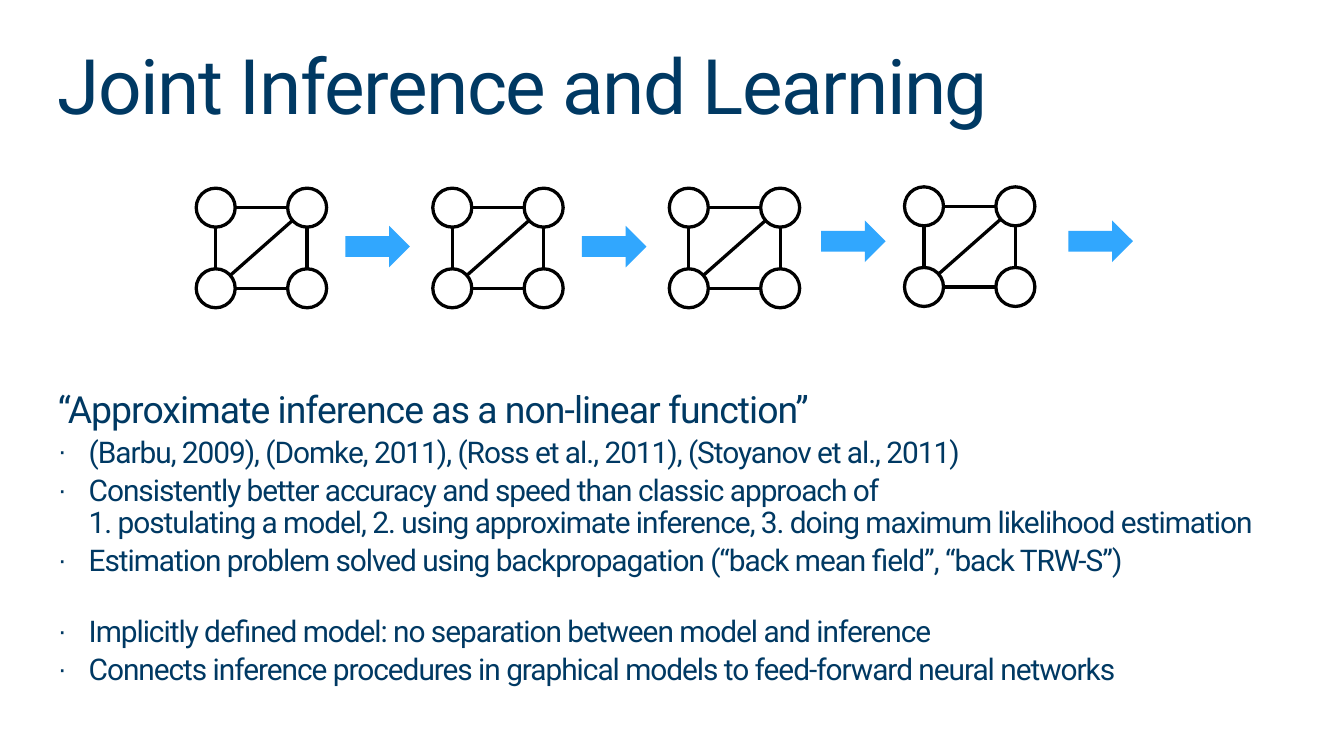
from copy import deepcopy
from math import hypot
from typing import NamedTuple

from lxml import etree
from pptx import Presentation
from pptx import util as u
from pptx.dml.color import RGBColor
from pptx.enum import shapes, text
from pptx.oxml.ns import qn

COLORS = {"text": "003963", "graph": "000000", "arrow": "31A7FE"}
FONT = "Roboto"
NODE_SIZE = 0.29
NODES = [(0, 0), (0.68, 0), (0.68, 0.6), (0, 0.6)]  # clockwise from top left
EDGES = [(0, 1), (0, 3), (1, 2), (3, 2), (3, 1)]


class Stage(NamedTuple):
    graph_left: float
    graph_top: float
    arrow_left: float
    arrow_top: float


class Line(NamedTuple):
    words: str
    size: float = 16
    space_before: float = 3.2
    bullet: bool = True


STAGES = [
    Stage(1.46, 1.4, 2.57, 1.68),
    Stage(3.22, 1.4, 4.33, 1.68),
    Stage(4.98, 1.4, 6.11, 1.64),
    Stage(6.73, 1.39, 7.95, 1.64),
]

TITLE = Line("Joint Inference and Learning", 41, 0, False)
POINTS = [
    Line("“Approximate inference as a non-linear function”", 20, 4.7, False),
    Line("(Barbu, 2009), (Domke, 2011), (Ross et al., 2011), (Stoyanov et al., 2011)"),
    Line("Consistently better accuracy and speed than classic approach of\v"
         "1. postulating a model, 2. using approximate inference, "
         "3. doing maximum likelihood estimation"),
    Line("Estimation problem solved using backpropagation "
         "(“back mean field”, “back TRW-S”)"),
    Line("Implicitly defined model: no separation between model and inference",
         space_before=20.6),
    Line("Connects inference procedures in graphical models "
         "to feed-forward neural networks"),
]


def color(name: str) -> RGBColor:
    return RGBColor.from_string(COLORS[name])


def write_lines(holder, box: tuple, lines: list[Line], tracking: float) -> None:
    """Place a placeholder and fill it with formatted paragraphs."""
    holder.left, holder.top, holder.width, holder.height = map(u.Inches, box)
    frame = holder.text_frame
    frame.margin_left = frame.margin_right = frame.margin_top = frame.margin_bottom = 0
    frame.word_wrap = True
    frame.auto_size = text.MSO_AUTO_SIZE.NONE
    frame.vertical_anchor = text.MSO_ANCHOR.TOP
    for index, line in enumerate(lines):
        paragraph = frame.add_paragraph() if index else frame.paragraphs[0]
        paragraph.text = line.words
        paragraph.alignment = text.PP_ALIGN.LEFT
        paragraph.line_spacing = 0.9
        paragraph.space_before = u.Pt(line.space_before)
        for run in paragraph.runs:
            run.font.name = FONT
            run.font.size = u.Pt(line.size)
            run.font.color.rgb = color("text")
            run._r.get_or_add_rPr().set("spc", str(round(tracking * 100)))
        # A line break keeps the size of the text around it
        for line_break in paragraph._p.findall(qn("a:br")):
            line_break.append(deepcopy(paragraph.runs[0]._r.rPr))
        set_bullet(paragraph, line.bullet)


def set_bullet(paragraph, bullet: bool) -> None:
    properties = paragraph._p.get_or_add_pPr()
    indent = u.Inches(0.23) if bullet else 0
    properties.set("marL", str(indent))
    properties.set("indent", str(-indent))
    if bullet:
        etree.SubElement(properties, qn("a:buSzPct")).set("val", "90000")
        etree.SubElement(properties, qn("a:buChar")).set("char", "·")
    else:
        etree.SubElement(properties, qn("a:buNone"))


def draw_graph(slide, left: float, top: float) -> None:
    """Draw four nodes, with edges running from rim to rim."""
    graph = slide.shapes.add_group_shape().shapes
    radius = NODE_SIZE / 2
    for x, y in NODES:
        node = graph.add_shape(shapes.MSO_SHAPE.OVAL, u.Inches(left + x),
                               u.Inches(top + y), u.Inches(NODE_SIZE), u.Inches(NODE_SIZE))
        node.shadow.inherit = False
        node.fill.background()
        style_line(node)
    for start, end in EDGES:
        (x1, y1), (x2, y2) = NODES[start], NODES[end]
        length = hypot(x2 - x1, y2 - y1)
        dx, dy = (x2 - x1) / length * radius, (y2 - y1) / length * radius
        x0, y0 = left + radius, top + radius
        edge = graph.add_connector(
            shapes.MSO_CONNECTOR.STRAIGHT,
            u.Inches(x0 + x1 + dx), u.Inches(y0 + y1 + dy),
            u.Inches(x0 + x2 - dx), u.Inches(y0 + y2 - dy))
        style_line(edge)
        etree.SubElement(edge._element.spPr, qn("a:effectLst"))


def style_line(shape) -> None:
    shape.line.color.rgb = color("graph")
    shape.line.width = u.Pt(1.75)


def draw_arrow(slide, left: float, top: float) -> None:
    arrow = slide.shapes.add_shape(shapes.MSO_SHAPE.RIGHT_ARROW, u.Inches(left),
                                   u.Inches(top), u.Inches(0.48), u.Inches(0.31))
    arrow.shadow.inherit = False
    arrow.fill.solid()
    arrow.fill.fore_color.rgb = color("arrow")
    arrow.line.fill.background()


def main() -> None:
    deck = Presentation()
    deck.slide_width = u.Inches(10)
    deck.slide_height = deck.slide_width * 9 // 16  # widescreen
    slide = deck.slides.add_slide(deck.slide_layouts[1])

    # Title and points
    write_lines(slide.shapes.title, (0.43, 0.36, 9.15, 0.62), [TITLE], -0.78)
    write_lines(slide.placeholders[1], (0.43, 2.91, 9.15, 2.27), POINTS, -0.53)

    # Inference steps
    for stage in STAGES:
        draw_graph(slide, stage.graph_left, stage.graph_top)
    for stage in STAGES:
        draw_arrow(slide, stage.arrow_left, stage.arrow_top)

    deck.save("out.pptx")


if __name__ == "__main__":
    main()
